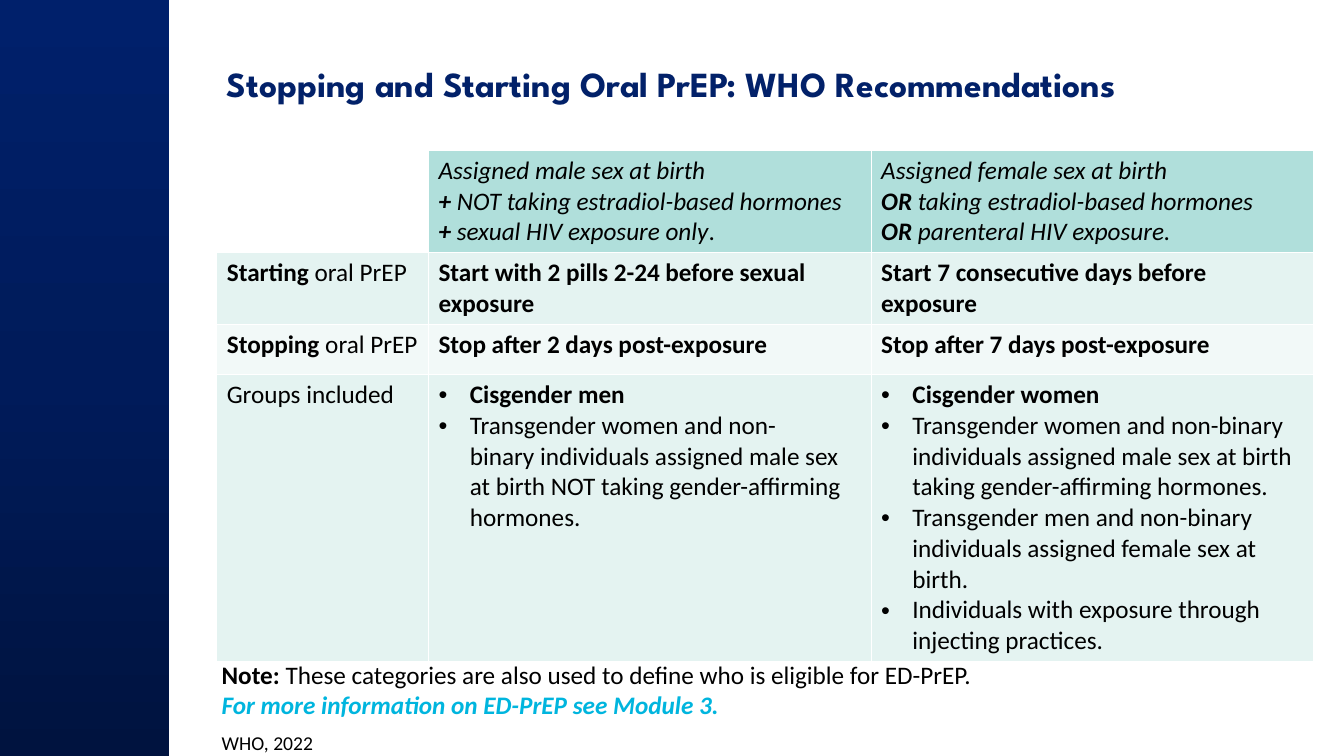
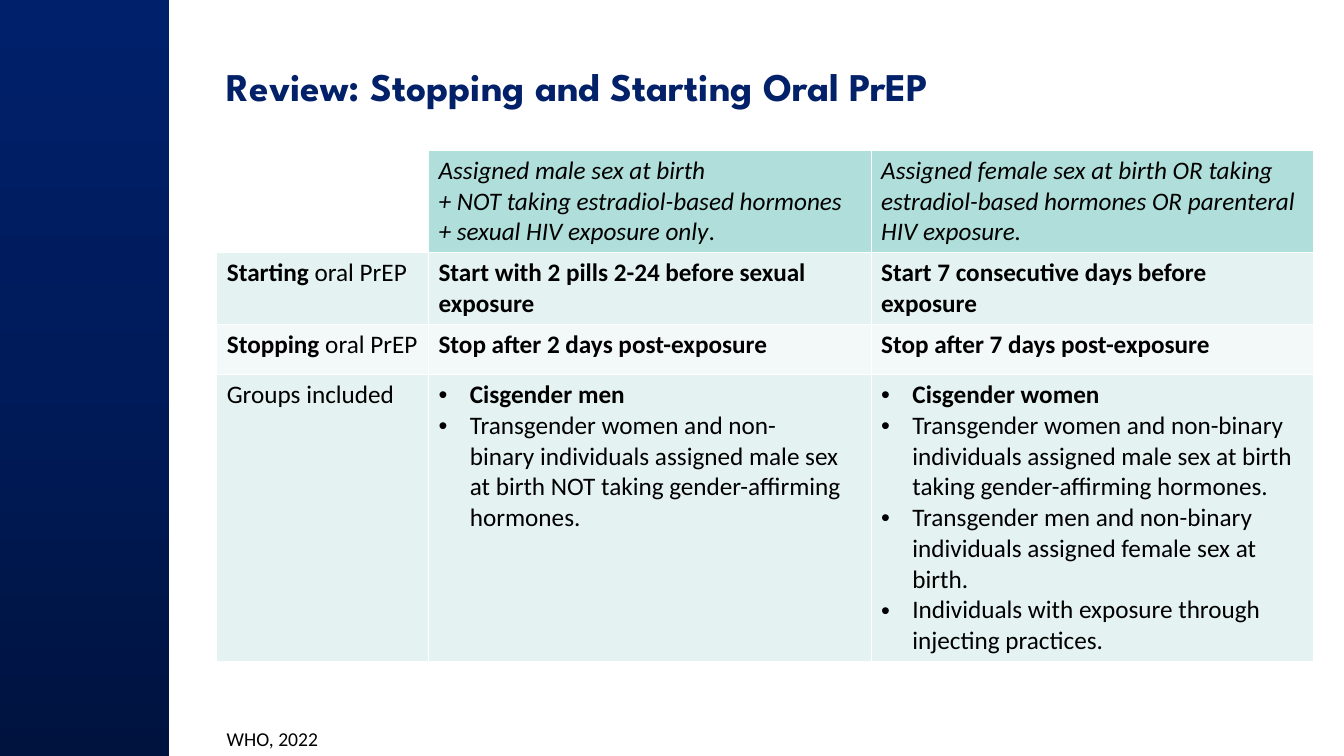
from lxml import etree
from pptx import Presentation
from pptx.dml.color import RGBColor
from pptx.enum.shapes import MSO_SHAPE
from pptx.enum.text import MSO_ANCHOR, MSO_AUTO_SIZE, PP_ALIGN
from pptx.oxml import parse_xml
from pptx.oxml.ns import nsdecls, qn
from pptx.util import Inches, Pt

RECTANGLE = MSO_SHAPE.RECTANGLE
TOP = MSO_ANCHOR.TOP
LEFT = PP_ALIGN.LEFT
NO_AUTOFIT = MSO_AUTO_SIZE.NONE

NAVY = RGBColor(0x02, 0x21, 0x69)
BLACK = RGBColor(0x00, 0x00, 0x00)
WHITE = RGBColor(0xFF, 0xFF, 0xFF)
CYAN = RGBColor(0x00, 0xB5, 0xDE)
TEAL = RGBColor(0xB0, 0xDF, 0xDB)
MINT = RGBColor(0xE4, 0xF3, 0xF1)
PALE_MINT = RGBColor(0xF2, 0xF9, 0xF8)
BAND_STOPS = (
    (0, RGBColor(0x00, 0x13, 0x3F)),
    (50, RGBColor(0x00, 0x1B, 0x5A)),
    (100, RGBColor(0x00, 0x20, 0x6B)),
)

TITLE_FONT = "League Spartan"
BODY_FONT = "Calibri"
BODY_SIZE = 18
SOURCE_SIZE = 14
BULLET_INDENT = Inches(0.31)
COLUMN_WIDTHS = (2.1, 4.39, 4.39)
ROW_HEIGHTS = (0.98, 0.7, 0.5, 2.82)
ROW_FILLS = (TEAL, MINT, PALE_MINT, MINT)
NBSP = chr(160)

STARTING_ROW = (
    [[("Starting", "b"), (" oral PrEP", "")]],
    [[("Start with 2 pills 2-24 before sexual exposure", "b")]],
    [[("Start 7 consecutive days before exposure", "b")]],
)
STOPPING_ROW = (
    [[("Stopping", "b"), (" oral PrEP", "")]],
    [[("Stop after 2 days post-exposure", "b")]],
    [[("Stop after 7 days post-exposure", "b")]],
)
GROUPS_ROW = (
    [[("Groups included", "")]],
    [
        [("Cisgender men", "b")],
        [(f"Transgender women and non-binary{NBSP}individuals assigned male sex "
          "at birth NOT taking gender-affirming hormones.", "")],
    ],
    [
        [("Cisgender women", "b")],
        [("Transgender women and non-binary individuals assigned male sex "
          "at birth taking gender-affirming hormones.", "")],
        [("Transgender men and non-binary individuals assigned female sex "
          "at birth.", "")],
        [("Individuals with exposure through injecting practices.", "")],
    ],
)
RECOMMENDATION_HEADER = (
    [],
    [
        [("Assigned male sex at birth", "i")],
        [("+", "bi"), (" NOT taking estradiol-based hormones", "i")],
        [("+", "bi"), (" sexual HIV exposure only", "i"), (".", "")],
    ],
    [
        [("Assigned female sex at birth", "i")],
        [("OR", "bi"), (" taking estradiol-based hormones", "i")],
        [("OR", "bi"), (" parenteral HIV exposure.", "i")],
    ],
)
REVIEW_HEADER = (
    [],
    [
        [("Assigned male sex at birth", "i")],
        [("+ NOT taking estradiol-based hormones", "i")],
        [("+ sexual HIV exposure only", "i"), (".", "")],
    ],
    [[("Assigned female sex at birth OR taking estradiol-based hormones "
       "OR parenteral HIV exposure.", "i")]],
)
NOTE = [
    [("Note: ", "b"),
     ("These categories are also used to define who is eligible for ED-PrEP.", "")],
    [("For more information on ED-PrEP see Module 3.", "bi")],
]


def add_bullet(para):
    properties = para._p.get_or_add_pPr()
    properties.set("marL", str(BULLET_INDENT))
    properties.set("indent", str(-BULLET_INDENT))
    etree.SubElement(properties, qn("a:buFont"), typeface="Arial")
    etree.SubElement(properties, qn("a:buChar"), char="•")


def write_paragraphs(frame, paragraphs, size, bulleted=False):
    for index, spans in enumerate(paragraphs):
        para = frame.paragraphs[0] if index == 0 else frame.add_paragraph()
        if bulleted:
            add_bullet(para)
        para.alignment = LEFT
        para.font.name = BODY_FONT
        para.font.size = Pt(size)
        para.font.color.rgb = BLACK
        for text, style in spans:
            span = para.add_run()
            span.text = text
            span.font.bold = "b" in style
            span.font.italic = "i" in style


def add_side_band(page, layout, width, height):
    band = page.shapes.add_shape(RECTANGLE, 0, 0, width, height)
    band.shadow.inherit = False
    band.line.fill.background()
    stops = "".join(
        f'<a:gs pos="{position * 1000}"><a:srgbClr val="{color}"/></a:gs>'
        for position, color in BAND_STOPS
    )
    gradient = parse_xml(
        f'<a:gradFill {nsdecls("a")} rotWithShape="1"><a:gsLst>{stops}</a:gsLst>'
        '<a:lin ang="16200000" scaled="0"/></a:gradFill>'
    )
    band.element.spPr.find(qn("a:prstGeom")).addnext(gradient)
    layout.shapes.element.insert(2, band.element)


def format_title(page, text, size, left, top, width, height):
    title = page.shapes.title
    title.left, title.top, title.width, title.height = map(
        Inches, (left, top, width, height))
    frame = title.text_frame
    frame.text = text
    frame.auto_size = NO_AUTOFIT
    frame.vertical_anchor = TOP
    para = frame.paragraphs[0]
    para.alignment = LEFT
    para.font.name = TITLE_FONT
    para.font.size = Pt(size)
    para.font.bold = True
    para.font.color.rgb = NAVY


def add_cell_borders(cell):
    properties = cell._tc.get_or_add_tcPr()
    for index, side in enumerate(("lnL", "lnR", "lnT", "lnB")):
        properties.insert(index, parse_xml(
            f'<a:{side} {nsdecls("a")} w="{Pt(0.75)}"><a:solidFill>'
            f'<a:srgbClr val="{WHITE}"/></a:solidFill></a:{side}>'
        ))


def add_dosing_table(page, header, left, top):
    rows = (header, STARTING_ROW, STOPPING_ROW, GROUPS_ROW)
    table = page.shapes.add_table(
        len(rows), len(COLUMN_WIDTHS), Inches(left), Inches(top),
        Inches(sum(COLUMN_WIDTHS)), Inches(sum(ROW_HEIGHTS))).table
    table.first_row = False
    table.horz_banding = False
    for column, width in zip(table.columns, COLUMN_WIDTHS):
        column.width = Inches(width)
    for row_index, row in enumerate(rows):
        table.rows[row_index].height = Inches(ROW_HEIGHTS[row_index])
        for column_index, paragraphs in enumerate(row):
            cell = table.cell(row_index, column_index)
            cell.fill.solid()
            cell.fill.fore_color.rgb = ROW_FILLS[row_index] if paragraphs else WHITE
            add_cell_borders(cell)
            bulleted = row is GROUPS_ROW and column_index > 0
            write_paragraphs(cell.text_frame, paragraphs, BODY_SIZE, bulleted)


def add_text(page, paragraphs, size, left, top, width, height):
    box = page.shapes.add_textbox(*map(Inches, (left, top, width, height)))
    box.text_frame.word_wrap = True
    write_paragraphs(box.text_frame, paragraphs, size)
    return box


def add_dosing_page(deck, layout, title, title_size, title_width, header,
                    source_left, source_top):
    page = deck.slides.add_slide(layout)
    format_title(page, title, title_size, 2.15, 0.57, title_width, 0.92)
    add_dosing_table(page, header, 2.15, 1.49)
    add_text(page, [[("WHO, 2022", "")]], SOURCE_SIZE,
             source_left, source_top, 2.28, 0.34)
    return page


def main():
    deck = Presentation()
    deck.slide_width = Inches(13.33)
    deck.slide_height = Inches(7.5)
    layout = deck.slide_layouts[5]

    page = add_dosing_page(
        deck, layout, "Stopping and Starting Oral PrEP: WHO Recommendations",
        25.2, 10, RECOMMENDATION_HEADER, 2.1, 7.2)
    add_side_band(page, layout, Inches(1.68), deck.slide_height)
    note = add_text(page, NOTE, BODY_SIZE, 2.1, 6.49, 10.98, 0.71)
    note.text_frame.paragraphs[1].runs[0].font.color.rgb = CYAN

    add_dosing_page(
        deck, layout, "Review: Stopping and Starting Oral PrEP",
        28, 10.31, REVIEW_HEADER, 2.15, 7.16)
    deck.save("out.pptx")


if __name__ == "__main__":
    main()
